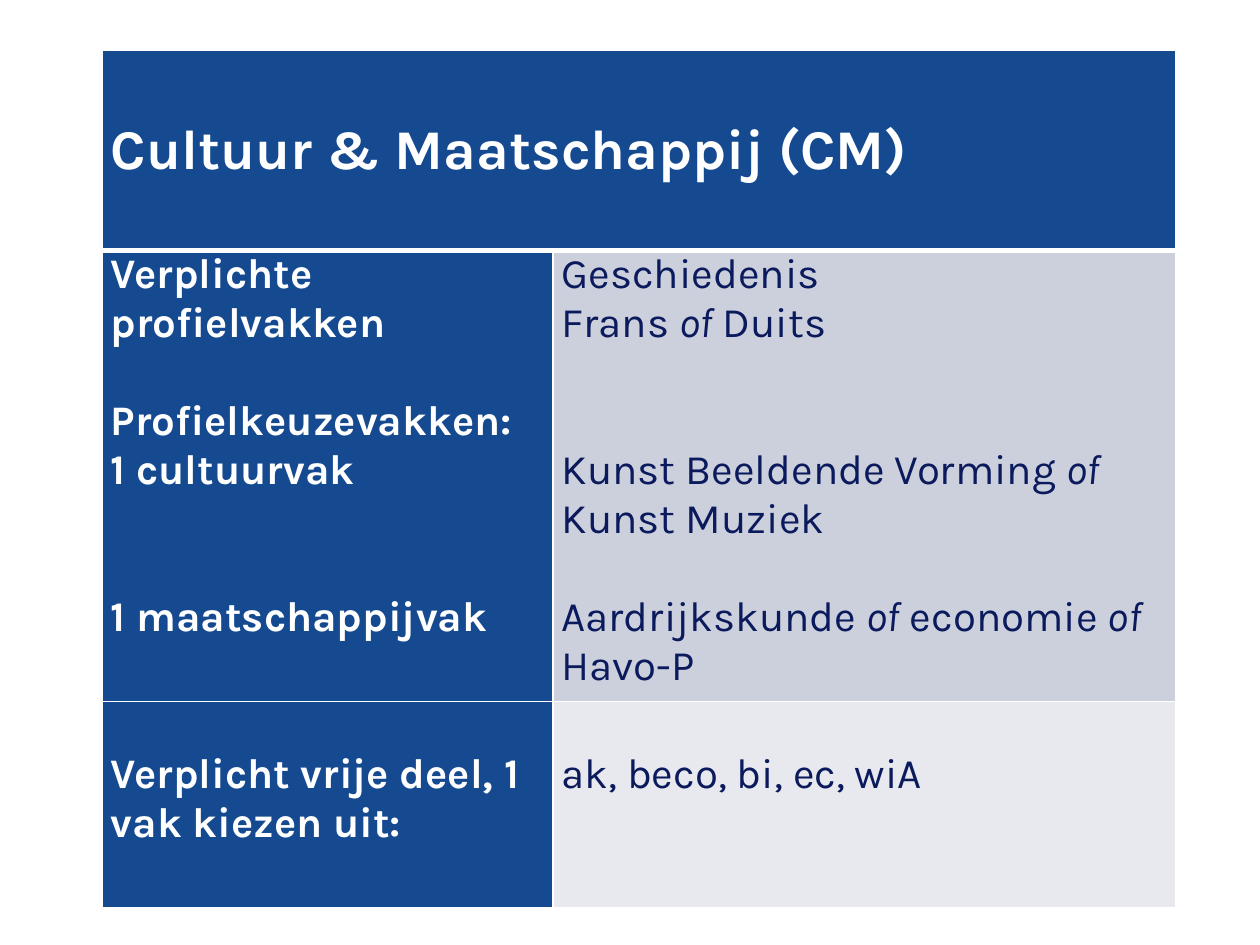
from lxml.etree import SubElement
from pptx import Presentation
from pptx.dml.color import RGBColor
from pptx.enum.text import MSO_ANCHOR
from pptx.oxml.ns import qn
from pptx.util import Pt

WHITE, NAVY, BLUE = "FFFFFF", "0A1A5C", "154A91"
GREY, PALE = "CCD0DC", "E8E9EE"
LINE = 28


def color(value):
    """Turn a hex string into a colour."""
    return RGBColor.from_string(value)


def set_borders(cell, **widths):
    """Draw white borders, one point wide unless a side says otherwise."""
    properties = cell._tc.get_or_add_tcPr()
    for index, side in enumerate("LRTB"):
        width = Pt(widths.get(side, 1))
        line = properties.makeelement(qn(f"a:ln{side}"), {"w": str(width)})
        fill = SubElement(line, qn("a:solidFill"))
        SubElement(fill, qn("a:srgbClr"), val=WHITE)
        properties.insert(index, line)


def fill_cell(cell, fill, paragraphs, font_color, bold, size=24, top=0):
    """Fill a cell with (space before in lines, text) pairs; asterisks mark italics."""
    cell.fill.solid()
    cell.fill.fore_color.rgb = color(fill)
    cell.margin_left = cell.margin_right = Pt(5)
    cell.margin_top, cell.margin_bottom = Pt(top), 0
    frame = cell.text_frame
    for index, (gap, text) in enumerate(paragraphs):
        paragraph = frame.add_paragraph() if index else frame.paragraphs[0]
        if gap:
            paragraph.space_before = Pt(gap * LINE)
        font = paragraph.font
        font.name, font.size, font.bold = "Karla", Pt(size), bold
        font.color.rgb = color(font_color)
        for position, part in enumerate(text.split("*")):
            if part:
                run = paragraph.add_run()
                run.text = part
                if position % 2:
                    run.font.italic = True


def add_profile_table(slide, left, top, width, height):
    """Place the table of subjects for the profile."""
    table = slide.shapes.add_table(3, 2, Pt(left), Pt(top), Pt(width), Pt(height)).table
    table.first_row = table.horz_banding = False
    for column, share in zip(table.columns, (0.42, 0.58)):
        column.width = Pt(round(width * share, 2))
    for row, share in zip(table.rows, (0.233, 0.526, 0.241)):
        row.height = Pt(round(height * share, 2))

    header = table.cell(0, 0)
    header.merge(table.cell(0, 1))
    fill_cell(header, BLUE, [(0, "Cultuur & Maatschappij (CM)")], WHITE, True, size=32)
    header.vertical_anchor = MSO_ANCHOR.MIDDLE

    labels = [
        [(0, "Verplichte profielvakken"), (1, "Profielkeuzevakken:"),
         (0, "1 cultuurvak"), (2, "1 maatschappijvak")],
        [(0, "Verplicht vrije deel, 1 vak kiezen uit:")],
    ]
    subjects = [
        [(0, "Geschiedenis"), (0, "Frans *of* Duits"),
         (2, "Kunst Beeldende Vorming *of* Kunst Muziek"),
         (1, "Aardrijkskunde *of* economie *of* Havo-P")],
        [(0, "ak, beco, bi, ec, wiA")],
    ]
    for index, fill in enumerate((GREY, PALE)):
        inset = index * LINE
        fill_cell(table.cell(index + 1, 0), BLUE, labels[index], WHITE, True, top=inset)
        fill_cell(table.cell(index + 1, 1), fill, subjects[index], NAVY, False, top=inset)

    for column in range(2):
        set_borders(table.cell(0, column), B=3)
        set_borders(table.cell(1, column), T=3)
        set_borders(table.cell(2, column))


def main():
    """Build the slide and save it."""
    presentation = Presentation()
    presentation.slide_width, presentation.slide_height = Pt(720), Pt(540)
    slide = presentation.slides.add_slide(presentation.slide_layouts[6])
    add_profile_table(slide, 58.3, 29, 613.4, 490)
    presentation.save("out.pptx")


if __name__ == "__main__":
    main()
